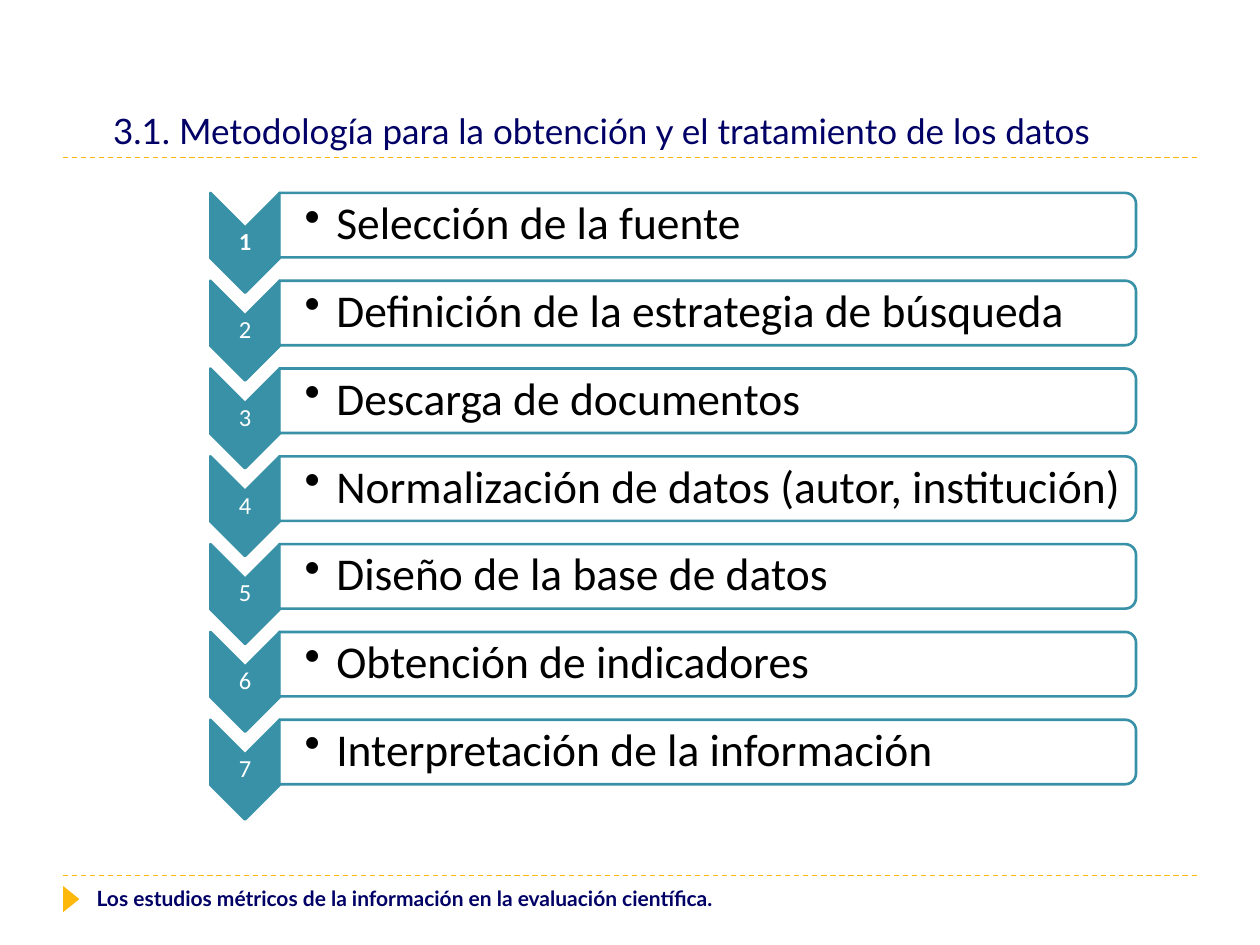
"""Build the slide listing the seven steps for obtaining and processing data."""
from pptx import Presentation
from pptx.dml.color import RGBColor
from pptx.enum import dml, shapes, text
from pptx.oxml.ns import qn
from pptx.util import Cm, Pt
from lxml import etree

NAVY = RGBColor(0x00, 0x00, 0x66)
GOLD = RGBColor(0xFE, 0xB8, 0x0A)
TEAL = RGBColor(0x38, 0x91, 0xA7)
WHITE = RGBColor(0xFF, 0xFF, 0xFF)
BLACK = RGBColor(0x00, 0x00, 0x00)

TITLE = "3.1. Metodología para la obtención y el tratamiento de los datos"
FOOTER = "Los estudios métricos de la información en la evaluación científica."
STEPS = [
    "Selección de la fuente",
    "Definición de la estrategia de búsqueda",
    "Descarga de documentos",
    "Normalización de datos (autor, institución)",
    "Diseño de la base de datos",
    "Obtención de indicadores",
    "Interpretación de la información",
]

RULE_LEFT, RULE_RIGHT = 1.27, 24.13
RULE_HEIGHTS = (17.65, 3.18)
FIRST_TOP, PITCH = 3.89, 1.77
CHEVRON_LEFT, CHEVRON_WIDTH, CHEVRON_HEIGHT = 4.24, 1.4, 2.01
BAR_LEFT, BAR_WIDTH, BAR_HEIGHT = 5.63, 17.27, 1.3


def add_rule(slide, y):
    rule = slide.shapes.add_connector(
        shapes.MSO_CONNECTOR.STRAIGHT, Cm(RULE_LEFT), Cm(y), Cm(RULE_RIGHT), Cm(y))
    rule.line.color.rgb = GOLD
    rule.line.width = Pt(0.75)
    rule.line.dash_style = dml.MSO_LINE.DASH
    etree.SubElement(rule._element.spPr, qn("a:effectLst"))


def add_turned_shape(slide, kind, left, top, width, height, fill, line=None):
    """Add a shape turned a quarter clockwise that covers the given area."""
    shift = (width - height) / 2
    shape = slide.shapes.add_shape(
        kind, Cm(left + shift), Cm(top - shift), Cm(height), Cm(width))
    shape.rotation = 90
    shape.shadow.inherit = False
    shape.fill.solid()
    shape.fill.fore_color.rgb = fill
    if line is None:
        shape.line.fill.background()
    else:
        shape.line.color.rgb = line
        shape.line.width = Pt(1.5)
    return shape


def add_text(slide, content, area, font, size, color, bold=False,
             anchor=text.MSO_ANCHOR.TOP, insets=(0.25, 0.13, 0.25, 0.13), spacing=1.0):
    frame = slide.shapes.add_textbox(*map(Cm, area)).text_frame
    frame.word_wrap = True
    frame.vertical_anchor = anchor
    (frame.margin_left, frame.margin_top,
     frame.margin_right, frame.margin_bottom) = map(Cm, insets)
    frame.text = content
    paragraph = frame.paragraphs[0]
    paragraph.line_spacing = spacing
    run_font = paragraph.runs[0].font
    run_font.name, run_font.size, run_font.bold = font, Pt(size), bold
    run_font.color.rgb = color
    return paragraph


def set_indent(paragraph, margin, indent, bullet=None):
    properties = paragraph._p.get_or_add_pPr()
    properties.set("marL", str(Cm(margin)))
    properties.set("indent", str(Cm(indent)))
    if bullet:
        etree.SubElement(properties, qn("a:buChar")).set("char", bullet)


def add_step(slide, index, label):
    top = FIRST_TOP + index * PITCH
    middle = text.MSO_ANCHOR.MIDDLE
    add_turned_shape(slide, shapes.MSO_SHAPE.CHEVRON, CHEVRON_LEFT, top,
                     CHEVRON_WIDTH, CHEVRON_HEIGHT, TEAL, TEAL)
    number = add_text(slide, str(index + 1), (CHEVRON_LEFT, top + 0.7, CHEVRON_WIDTH, 0.61),
                      "Calibri", 14, WHITE, index == 0, middle, (0.02,) * 4, 0.9)
    number.alignment = text.PP_ALIGN.CENTER
    bar = add_turned_shape(slide, shapes.MSO_SHAPE.ROUND_2_SAME_RECTANGLE, BAR_LEFT, top,
                           BAR_WIDTH, BAR_HEIGHT, WHITE, TEAL)
    fill_color = bar._element.spPr.find(qn("a:solidFill"))[0]
    etree.SubElement(fill_color, qn("a:alpha")).set("val", "90000")
    item = add_text(slide, label, (BAR_LEFT, top + 0.06, 17.2, 1.17), "Calibri", 26, BLACK,
                    False, middle, (0.51, 0.05, 0.05, 0.05), 0.9)
    set_indent(item, 0.64, -0.64, "•")


def main():
    presentation = Presentation()
    presentation.slide_width, presentation.slide_height = Cm(25.4), Cm(19.05)
    slide = presentation.slides.add_slide(presentation.slide_layouts[6])
    for y in RULE_HEIGHTS:
        add_rule(slide, y)
    add_turned_shape(slide, shapes.MSO_SHAPE.ISOSCELES_TRIANGLE,
                     RULE_LEFT, 17.86, 0.33, 0.53, GOLD)
    title = add_text(slide, TITLE, (1.27, 0.43, 22.86, 2.75), "Lato", 20, NAVY,
                     anchor=text.MSO_ANCHOR.BOTTOM, spacing=1.3)
    title.space_before = Pt(12)
    set_indent(title, 2.18, -1.42)
    add_text(slide, FOOTER, (1.7, 17.73, 22.2, 0.76), "Lato", 12, NAVY, True)
    for index, label in enumerate(STEPS):
        add_step(slide, index, label)
    presentation.save("out.pptx")


if __name__ == "__main__":
    main()
